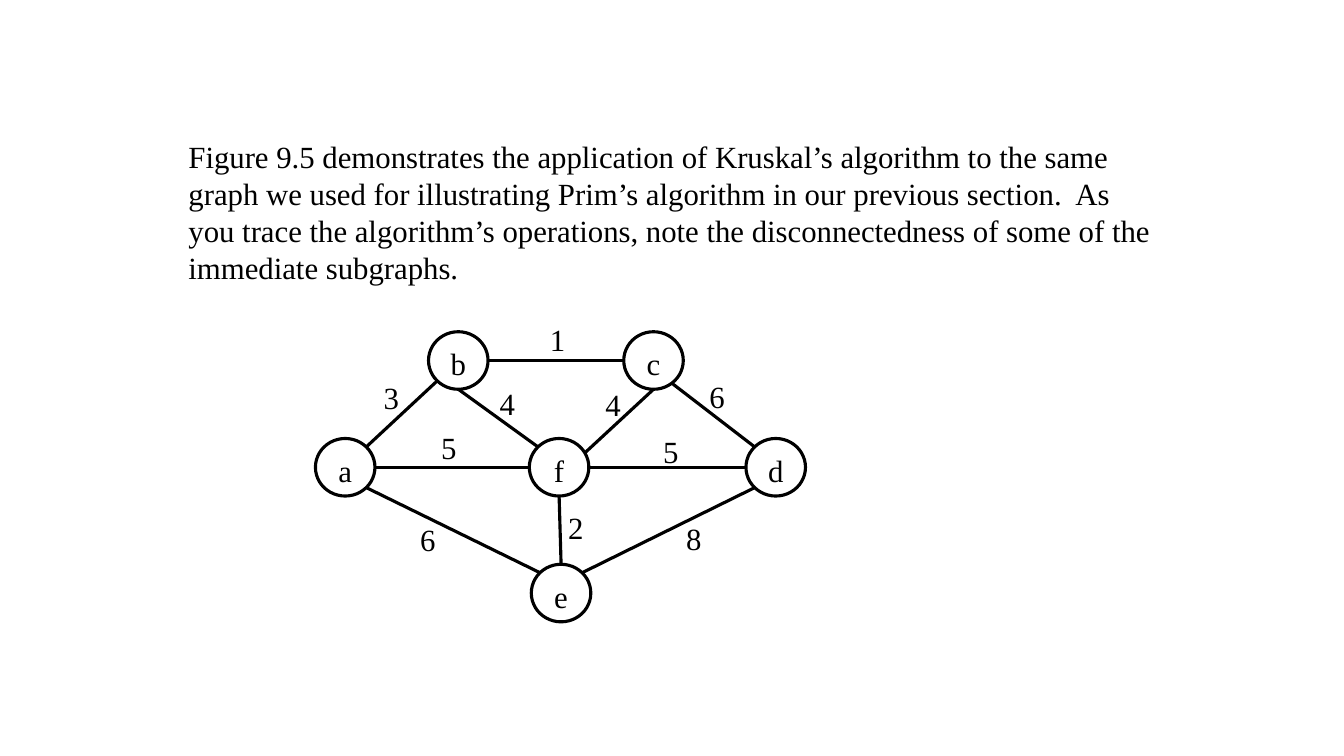
from math import cos, radians, sin

from lxml import etree
from pptx import Presentation
from pptx.dml.color import RGBColor
from pptx.enum.shapes import MSO_CONNECTOR as LINE, MSO_SHAPE as SHAPE
from pptx.enum.text import MSO_ANCHOR as ANCHOR, PP_ALIGN as ALIGN
from pptx.oxml.ns import qn
from pptx.util import Cm, Pt

COLORS = {"ink": "000000", "paper": "FFFFFF"}
INK = RGBColor.from_string(COLORS["ink"])
PAPER = RGBColor.from_string(COLORS["paper"])
NODE_W, NODE_H = 1.5, 1.45
STROKE = Pt(2.25)

INTRO = (
    "Figure 9.5 demonstrates the application of Kruskal’s algorithm to the same "
    "graph we used for illustrating Prim’s algorithm in our previous section.  "
    "As you trace the algorithm’s operations, note the disconnectedness of some "
    "of the immediate subgraphs."
)

# Left and top of each vertex, in cm
VERTICES = {
    "b": (10.8, 8.36),
    "c": (15.72, 8.36),
    "f": (13.34, 11.05),
    "a": (7.95, 11.05),
    "d": (18.8, 11.05),
    "e": (13.39, 14.22),
}

# Start vertex and angle, end vertex and angle, weight, left and top of weight.
# Angles are in degrees, clockwise from the right-hand side.
EDGES = [
    ("b", 0, "c", 180, "1", 13.61, 7.95),
    ("a", 0, "f", 180, "5", 10.87, 10.69),
    ("f", 0, "d", 180, "5", 16.46, 10.77),
    ("a", -45, "b", 135, "3", 9.42, 9.42),
    ("f", -30, "c", 90, "4", 15.01, 9.6),
    ("e", -45, "d", 135, "8", 17.04, 12.98),
    ("a", 45, "e", -135, "6", 10.34, 13.0),
    ("e", -90, "f", 90, "2", 14.07, 12.7),
    ("b", 90, "f", -135, "4", 12.34, 9.58),
    ("c", 52, "d", -135, "6", 17.63, 9.4),
]


def write(frame, text):
    frame.text = text
    font = frame.paragraphs[0].runs[0].font
    font.name = "Times New Roman"
    font.size = Pt(22)
    font.color.rgb = INK


def rim_point(vertex, angle):
    """Return the point on a vertex's outline at the given angle."""
    left, top = VERTICES[vertex]
    x = left + NODE_W / 2 * (1 + cos(radians(angle)))
    y = top + NODE_H / 2 * (1 + sin(radians(angle)))
    return Cm(x), Cm(y)


prs = Presentation()
prs.slide_width, prs.slide_height = Cm(33.87), Cm(19.05)
slide = prs.slides.add_slide(prs.slide_layouts[6])
shapes = slide.shapes

intro = shapes.add_textbox(Cm(4.5), Cm(3.35), Cm(24.92), Cm(4.01))
intro.text_frame.word_wrap = True
write(intro.text_frame, INTRO)

for name, (left, top) in VERTICES.items():
    vertex = shapes.add_shape(SHAPE.OVAL, Cm(left), Cm(top), Cm(NODE_W), Cm(NODE_H))
    vertex.shadow.inherit = False
    vertex.fill.solid()
    vertex.fill.fore_color.rgb = PAPER
    vertex.line.color.rgb = INK
    vertex.line.width = STROKE
    write(vertex.text_frame, name)
    vertex.text_frame.vertical_anchor = ANCHOR.TOP
    vertex.text_frame.paragraphs[0].alignment = ALIGN.CENTER

for start, start_angle, end, end_angle, weight, left, top in EDGES:
    edge = shapes.add_connector(
        LINE.STRAIGHT, *rim_point(start, start_angle), *rim_point(end, end_angle)
    )
    edge.line.color.rgb = INK
    edge.line.width = STROKE
    etree.SubElement(edge._element.spPr, qn("a:effectLst"))

    label = shapes.add_textbox(Cm(left), Cm(top), Cm(0.91), Cm(1.19))
    label.text_frame.word_wrap = False
    write(label.text_frame, weight)

prs.save("out.pptx")
